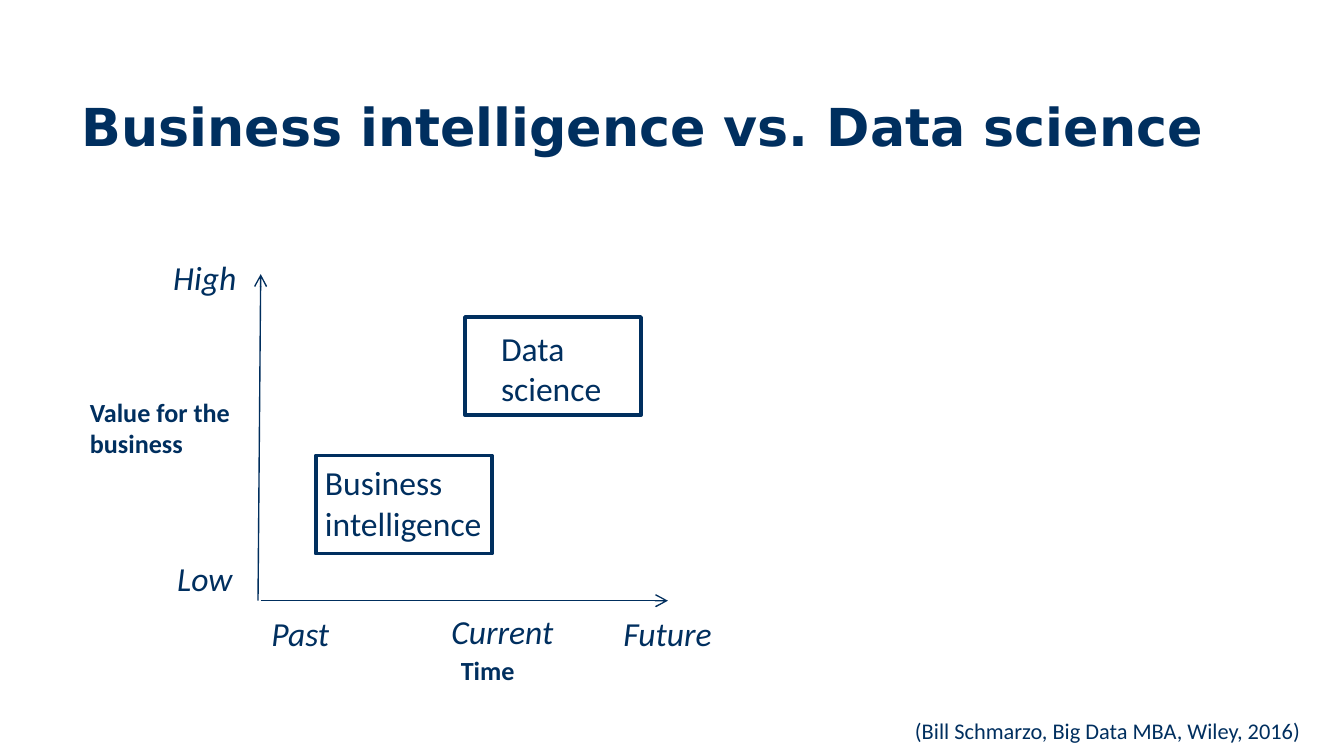
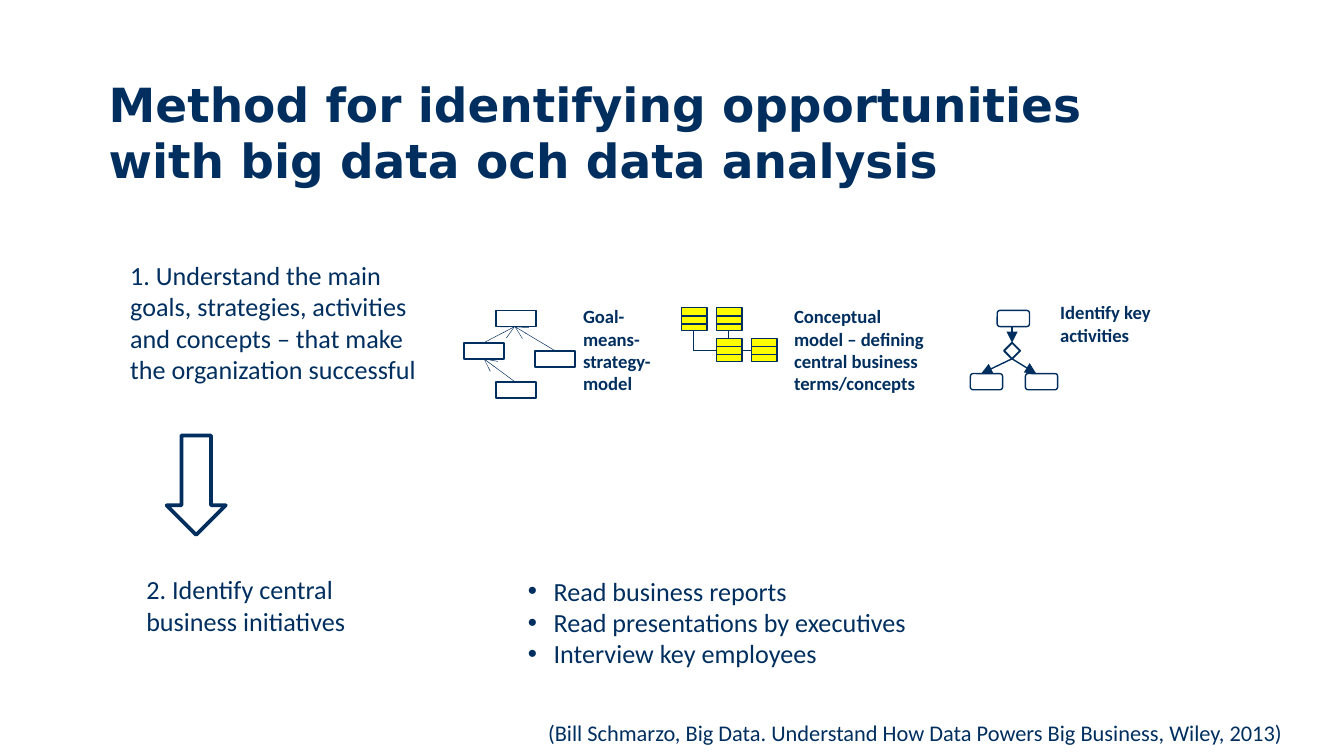
from lxml import etree
from pptx import Presentation
from pptx.dml.color import RGBColor
from pptx.enum.shapes import MSO_CONNECTOR, MSO_SHAPE
from pptx.enum.text import MSO_AUTO_SIZE
from pptx.oxml.ns import qn
from pptx.util import Inches, Pt

NAVY = "002F5F"
AXIS_NAVY = "002E5D"
WHITE = "FFFFFF"
YELLOW = "FFFF00"
TITLE_FONT = "DejaVu Sans"
BODY_FONT = "Calibri"
RECTANGLE = MSO_SHAPE.RECTANGLE
ROUNDED = MSO_SHAPE.ROUNDED_RECTANGLE
DIAMOND = MSO_SHAPE.DIAMOND
DOWN_ARROW = MSO_SHAPE.DOWN_ARROW
STRAIGHT = MSO_CONNECTOR.STRAIGHT
ELBOW = MSO_CONNECTOR.ELBOW
GROW = MSO_AUTO_SIZE.SHAPE_TO_FIT_TEXT


def rgb(value):
    """Turn a hex string into a colour."""
    return RGBColor.from_string(value)


def add_text(slide, box, lines, size, bold=False, italic=False,
             font=BODY_FONT, wrap=True, bullets=False):
    """Add a navy text box with one paragraph per line."""
    label = slide.shapes.add_textbox(*map(Inches, box))
    frame = label.text_frame
    frame.text = "\n".join(lines)
    frame.word_wrap = wrap
    if font == BODY_FONT:
        frame.auto_size = GROW
    for paragraph in frame.paragraphs:
        if bullets:
            add_bullet(paragraph)
        for run in paragraph.runs:
            run.font.name = font
            run.font.size = Pt(size)
            run.font.bold = bold
            run.font.italic = italic
            run.font.color.rgb = rgb(NAVY)


def add_bullet(paragraph):
    """Give a paragraph a hanging round bullet."""
    properties = paragraph._p.get_or_add_pPr()
    indent = Inches(0.19)
    properties.set("marL", str(indent))
    properties.set("indent", str(-indent))
    etree.SubElement(properties, qn("a:buFont")).set("typeface", "Arial")
    etree.SubElement(properties, qn("a:buChar")).set("char", "•")


def add_title(slide, box, text, size):
    """Add the slide title."""
    add_text(slide, box, [text], size, bold=True, font=TITLE_FONT)


def add_source(slide, box, text):
    """Add the literature reference at the foot of the slide."""
    add_text(slide, box, [text], 12, wrap=False)


def add_outline(shapes, kind, box, width, fill=WHITE):
    """Add a filled shape with a navy outline."""
    outline = shapes.add_shape(kind, *map(Inches, box))
    outline.shadow.inherit = False
    outline.fill.solid()
    outline.fill.fore_color.rgb = rgb(fill)
    outline.line.color.rgb = rgb(NAVY)
    outline.line.width = Pt(width)


def add_line(shapes, start, end, width=0.75, color=NAVY, tip=None, kind=STRAIGHT):
    """Add a line, with an arrowhead at its end if a tip is named."""
    link = shapes.add_connector(kind, *map(Inches, (*start, *end)))
    link.line.color.rgb = rgb(color)
    link.line.width = Pt(width)
    properties = link._element.spPr
    if tip:
        etree.SubElement(properties.find(qn("a:ln")), qn("a:tailEnd")).set("type", tip)
    etree.SubElement(properties, qn("a:effectLst"))
    if kind == ELBOW:
        properties.find(qn("a:prstGeom")).set("prst", "bentConnector2")


def add_goal_model(slide):
    """Draw the goal tree with arrows pointing to the parent goals."""
    for left, top in ((3.69, 2.31), (3.98, 2.61), (3.45, 2.55), (3.69, 2.84)):
        add_outline(slide.shapes, RECTANGLE, (left, top, 0.3, 0.12), 1)
    top_goal = (3.83, 2.43)
    for start, end in (((3.83, 2.84), (3.6, 2.67)),
                       ((3.6, 2.55), top_goal),
                       ((4.13, 2.61), top_goal)):
        add_line(slide.shapes, start, end, 0.25, AXIS_NAVY, "arrow")


def add_concept_model(slide):
    """Draw the linked class boxes, each with three compartments."""
    model = slide.shapes.add_group_shape().shapes
    width, height = 0.19, 0.17
    for left, top in ((5.07, 2.29), (5.33, 2.29), (5.33, 2.52), (5.59, 2.52)):
        add_outline(model, RECTANGLE, (left, top, width, height), 0.75, YELLOW)
        for divider in (top + 0.06, top + 0.12):
            add_line(model, (left, divider), (left + width, divider))
    add_line(model, (5.42, 2.46), (5.42, 2.52))
    add_line(model, (5.52, 2.61), (5.59, 2.61))
    add_line(model, (5.33, 2.61), (5.16, 2.46), kind=ELBOW)


def add_activity_model(slide):
    """Draw the activity flow that branches at a decision."""
    for left, top in ((7.42, 2.31), (7.22, 2.78), (7.63, 2.78)):
        add_outline(slide.shapes, ROUNDED, (left, top, 0.24, 0.12), 0.75)
    add_outline(slide.shapes, DIAMOND, (7.47, 2.55, 0.12, 0.12), 1)
    decision = (7.53, 2.67)
    for start, end in (((7.53, 2.43), (7.53, 2.55)),
                       (decision, (7.3, 2.78)),
                       (decision, (7.71, 2.78))):
        add_line(slide.shapes, start, end, tip="triangle")


def build_comparison(slide):
    """Place the two fields on axes of time and business value."""
    add_title(slide, (0.51, 0.65, 8.67, 0.65),
              "Business intelligence vs. Data science", 28)
    for start, tip in (((1.92, 4.47), (1.94, 2.04)), ((1.94, 4.47), (4.97, 4.47))):
        add_line(slide.shapes, start, tip, color=AXIS_NAVY, tip="arrow")
    for field, corner, box in (
            ("Business intelligence", (2.35, 3.39), (2.32, 3.39, 1.66, 0.71)),
            ("Data science", (3.46, 2.36), (3.63, 2.39, 1.34, 0.71))):
        add_outline(slide.shapes, RECTANGLE, (*corner, 1.31, 0.73), 2)
        add_text(slide, box, [field], 18)
    for mark, left, top, width in (
            ("High", 1.19, 1.86, 0.81), ("Low", 1.22, 4.1, 0.81),
            ("Past", 1.92, 4.51, 1.22), ("Current", 3.26, 4.5, 1.22),
            ("Future", 4.54, 4.51, 1.22)):
        add_text(slide, (left, top, width, 0.4), [mark], 18, italic=True)
    add_text(slide, (0.57, 2.9, 1.25, 0.57), ["Value for the business"], 14, bold=True)
    add_text(slide, (3.33, 4.82, 1.69, 0.34), ["Time"], 14, bold=True)
    add_source(slide, (6.71, 5.29, 3.1, 0.3),
               "(Bill Schmarzo, Big Data MBA, Wiley, 2016)")


def build_method(slide):
    """Show the first two steps of the method with their models."""
    add_title(slide, (0.71, 0.51, 7.49, 0.65),
              "Method for identifying opportunities with big data och data analysis", 25.2)
    add_text(slide, (0.87, 1.88, 2.45, 1.04),
             ["1. Understand the main goals, strategies, activities and concepts "
              "– that make the organization successful"], 14)
    add_outline(slide.shapes, DOWN_ARROW, (1.24, 3.24, 0.44, 0.74), 2)
    add_text(slide, (0.99, 4.22, 1.8, 0.57),
             ["2. Identify central business initiatives"], 14)
    add_goal_model(slide)
    add_concept_model(slide)
    add_activity_model(slide)
    for caption, box in (
            ("Goal-means-strategy-model", (4.24, 2.22, 0.86, 0.77)),
            ("Conceptual model – defining central business terms/concepts",
             (5.81, 2.22, 1.21, 0.77)),
            ("Identify key activities", (7.79, 2.19, 1.38, 0.58))):
        add_text(slide, box, [caption], 10, bold=True)
    add_text(slide, (3.83, 4.23, 3.88, 0.95),
             ["Read business reports", "Read presentations by executives",
              "Interview key employees"], 14, bullets=True)
    add_source(slide, (3.98, 5.3, 5.73, 0.3),
               "(Bill Schmarzo, Big Data. Understand How Data Powers Big Business, "
               "Wiley, 2013)")


def main():
    """Build and save the presentation."""
    deck = Presentation()
    deck.slide_width = Inches(10)
    deck.slide_height = deck.slide_width * 9 // 16
    blank = deck.slide_layouts[6]
    for build in (build_comparison, build_method):
        build(deck.slides.add_slide(blank))
    deck.save("out.pptx")


if __name__ == "__main__":
    main()
